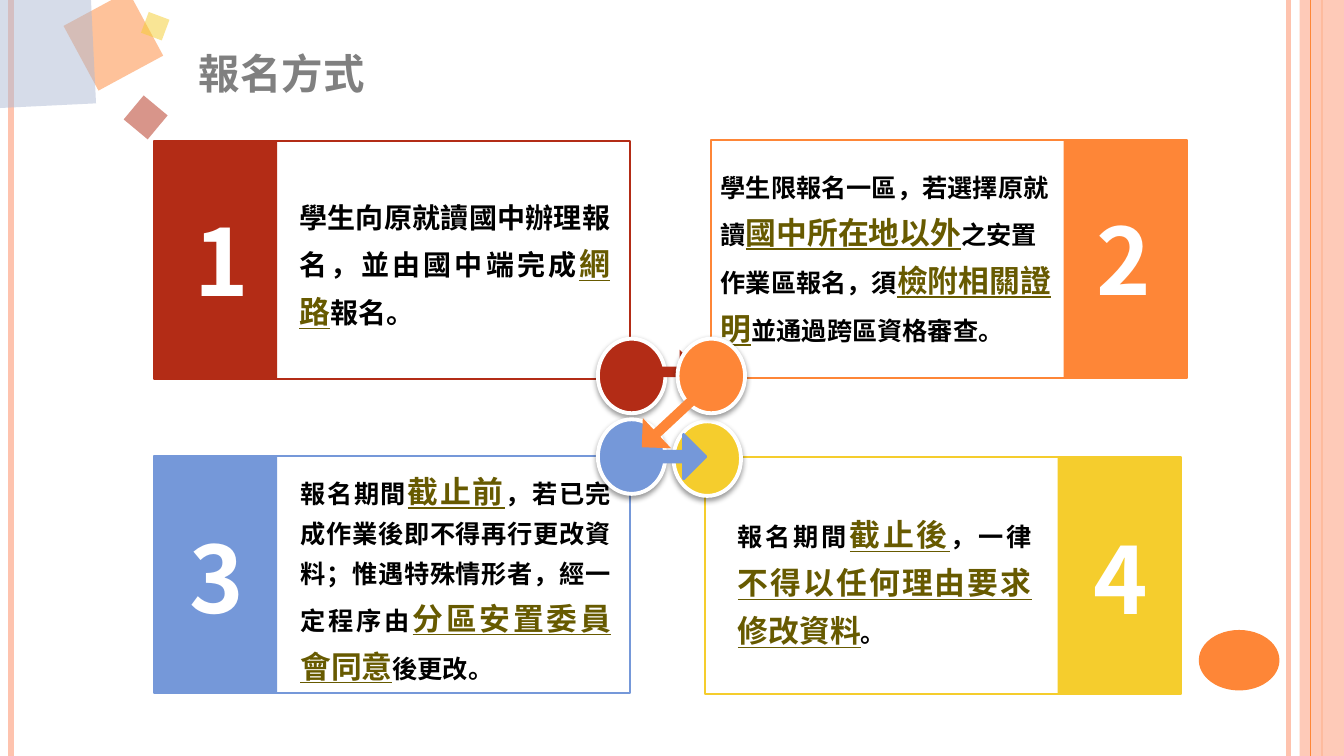
"""Build the four-step registration slide."""
from lxml.etree import SubElement
from pptx import Presentation
from pptx.dml.color import RGBColor
from pptx.enum.shapes import MSO_CONNECTOR, MSO_SHAPE
from pptx.enum.text import MSO_ANCHOR, MSO_AUTO_SIZE, PP_ALIGN
from pptx.oxml.ns import qn
from pptx.util import Inches, Pt

FONT = "Noto Sans CJK SC"
WHITE = RGBColor(0xFF, 0xFF, 0xFF)
BLACK = RGBColor(0x00, 0x00, 0x00)
GREY = RGBColor(0x80, 0x80, 0x80)
OLIVE = RGBColor(0x67, 0x5A, 0x00)
PINK = RGBColor(0xFE, 0xC3, 0xAE)
ORANGE = RGBColor(0xFE, 0x86, 0x37)
RED = RGBColor(0xB3, 0x2C, 0x16)
BLUE = RGBColor(0x75, 0x98, 0xD9)
YELLOW = RGBColor(0xF5, 0xCD, 0x2D)
PALE_BLUE = RGBColor(0xAE, 0xBA, 0xD5)

WIDTH, HEIGHT = 13.33, 7.5
PANEL_WIDTH, PANEL_HEIGHT, STRIP_WIDTH = 4.72, 2.36, 1.22
DOT_WIDTH, DOT_HEIGHT = 0.67, 0.74

presentation = Presentation()
presentation.slide_width = Inches(WIDTH)
presentation.slide_height = Inches(HEIGHT)
slide = presentation.slides.add_slide(presentation.slide_layouts[5])


def add_filled(preset, box, fill, alpha=100, outline=None, outline_width=1.5):
    """Add a flat preset shape at box (left, top, width, height) in inches."""
    shape = slide.shapes.add_shape(preset, *map(Inches, box))
    shape.shadow.inherit = False
    shape.fill.solid()
    shape.fill.fore_color.rgb = fill
    if alpha < 100:
        colour = shape._element.spPr.find(qn("a:solidFill"))[0]
        SubElement(colour, qn("a:alpha"), val=str(alpha * 1000))
    if outline is None:
        shape.line.fill.background()
    else:
        shape.line.color.rgb = outline
        shape.line.width = Pt(outline_width)
    return shape


def style_paragraph(paragraph, size, colour, align):
    """Give a paragraph its bold Latin and East Asian font."""
    paragraph.alignment = align
    font = paragraph.font
    font.name, font.size, font.bold = FONT, Pt(size), True
    font.color.rgb = colour
    defaults = paragraph._p.pPr.find(qn("a:defRPr"))
    SubElement(defaults, qn("a:ea"), typeface=FONT)


for x, colour, weight in [(12.78, PINK, 3), (0.11, PINK, 4.5),
                          (13.11, ORANGE, 1.5), (13, ORANGE, 0.75)]:
    rail = slide.shapes.add_connector(
        MSO_CONNECTOR.STRAIGHT, Inches(x), 0, Inches(x), Inches(HEIGHT))
    rail.line.color.rgb = colour
    rail.line.width = Pt(weight)
    SubElement(rail._element.spPr, qn("a:effectLst"))
    if x == 13.11:
        add_filled(MSO_SHAPE.RECTANGLE, (12.89, 0, WIDTH - 12.89, HEIGHT), PINK, 87)

add_filled(MSO_SHAPE.OVAL, (11.89, 6.25, 0.8, 0.6), ORANGE)

for left, top, side, angle, colour in [
        (0.76, 0.04, 0.73, 331.6, ORANGE), (-0.46, -0.32, 1.38, 357.2, PALE_BLUE),
        (1.29, 1.01, 0.31, 309.8, RED), (1.43, 0.15, 0.22, 290.5, YELLOW)]:
    confetti = add_filled(MSO_SHAPE.RECTANGLE, (left, top, side, side), colour, 50)
    confetti.rotation = angle

title = slide.shapes.title
title.left, title.top, title.width, title.height = map(Inches, (1.87, 0.43, 6.13, 0.58))
title.text_frame.auto_size = MSO_AUTO_SIZE.NONE
title.text_frame.vertical_anchor = MSO_ANCHOR.MIDDLE
title.text_frame.text = "報名方式"
heading = title.text_frame.paragraphs[0]
heading.space_before = Pt(6)
style_paragraph(heading, 29.6, GREY, PP_ALIGN.LEFT)

# Each passage alternates plain and emphasised wording.
steps = [
    dict(number="4", colour=YELLOW, corner=(6.99, 4.53), strip_side=1,
         dot=(6.68, 4.18), digit=(10.74, 5.12), body=(7.22, 4.96, 3.11, 1.54),
         size=18, align=PP_ALIGN.JUSTIFY, arrow=None,
         passage=["報名期間", "截止後", "，一律", "不得以任何理由要求修改資料", "。"]),
    dict(number="1", colour=RED, corner=(1.53, 1.4), strip_side=0,
         dot=(5.93, 3.36), digit=(1.82, 1.97), body=(2.87, 1.84, 3.28, 1.5),
         size=20, align=PP_ALIGN.JUSTIFY, arrow=(6.31, 3.47, 0.65, 0.44, 0),
         passage=["學生向原就讀國中辦理報名，並由國中端完成", "網路", "報名。"]),
    dict(number="3", colour=BLUE, corner=(1.53, 4.52), strip_side=0,
         dot=(5.93, 4.16), digit=(1.77, 5.11), body=(2.88, 4.53, 3.28, 2.28),
         size=18, align=PP_ALIGN.JUSTIFY, arrow=(6.35, 4.31, 0.65, 0.44, 0),
         passage=["報名期間", "截止前",
                  "，若已完成作業後即不得再行更改資料；惟遇特殊情形者，經一定程序由",
                  "分區安置委員會同意", "後更改。"]),
    dict(number="2", colour=ORANGE, corner=(7.05, 1.39), strip_side=1,
         dot=(6.72, 3.36), digit=(10.77, 1.96), body=(7.05, 1.57, 3.49, 1.94),
         size=18, align=PP_ALIGN.LEFT, arrow=(6.27, 3.99, 0.71, 0.41, 137),
         passage=["學生限報名一區，若選擇原就讀", "國中所在地以外",
                  "之安置作業區報名，須", "檢附相關證明", "並通過跨區資格審查。"]),
]

for step in steps:
    colour = step["colour"]
    left, top = step["corner"]
    add_filled(MSO_SHAPE.RECTANGLE, (left, top, PANEL_WIDTH, PANEL_HEIGHT),
               WHITE, outline=colour)
    strip_left = left + step["strip_side"] * (PANEL_WIDTH - STRIP_WIDTH)
    add_filled(MSO_SHAPE.RECTANGLE, (strip_left, top, STRIP_WIDTH, PANEL_HEIGHT), colour)

    body = slide.shapes.add_textbox(*map(Inches, step["body"])).text_frame
    body.word_wrap = True
    wording = body.paragraphs[0]
    wording.line_spacing = 1.3
    style_paragraph(wording, step["size"], BLACK, step["align"])
    for position, phrase in enumerate(step["passage"]):
        run = wording.add_run()
        run.text = phrase
        if position % 2:
            run.font.size = Pt(22)
            run.font.underline = True
            run.font.color.rgb = OLIVE

    digit = slide.shapes.add_textbox(*map(Inches, (*step["digit"], 0.75, 1.21))).text_frame
    digit.word_wrap = False
    digit.vertical_anchor = MSO_ANCHOR.MIDDLE
    digit.text = step["number"]
    style_paragraph(digit.paragraphs[0], 66, WHITE, PP_ALIGN.CENTER)

    dot = add_filled(MSO_SHAPE.OVAL, (*step["dot"], DOT_WIDTH, DOT_HEIGHT), colour,
                     outline=WHITE, outline_width=2.75)
    shadow = SubElement(dot._element.spPr.find(qn("a:effectLst")), qn("a:outerShdw"),
                        blurRad=str(Pt(4)), dist=str(Pt(2)), dir="5400000")
    SubElement(SubElement(shadow, qn("a:srgbClr"), val=str(BLACK)),
               qn("a:alpha"), val="40000")

    if step["arrow"]:
        *box, angle = step["arrow"]
        arrow = add_filled(MSO_SHAPE.RIGHT_ARROW, box, colour,
                           outline=BLUE if colour == BLUE else None, outline_width=2)
        arrow.adjustments[0] = 0.24
        arrow.rotation = angle

presentation.save("out.pptx")
